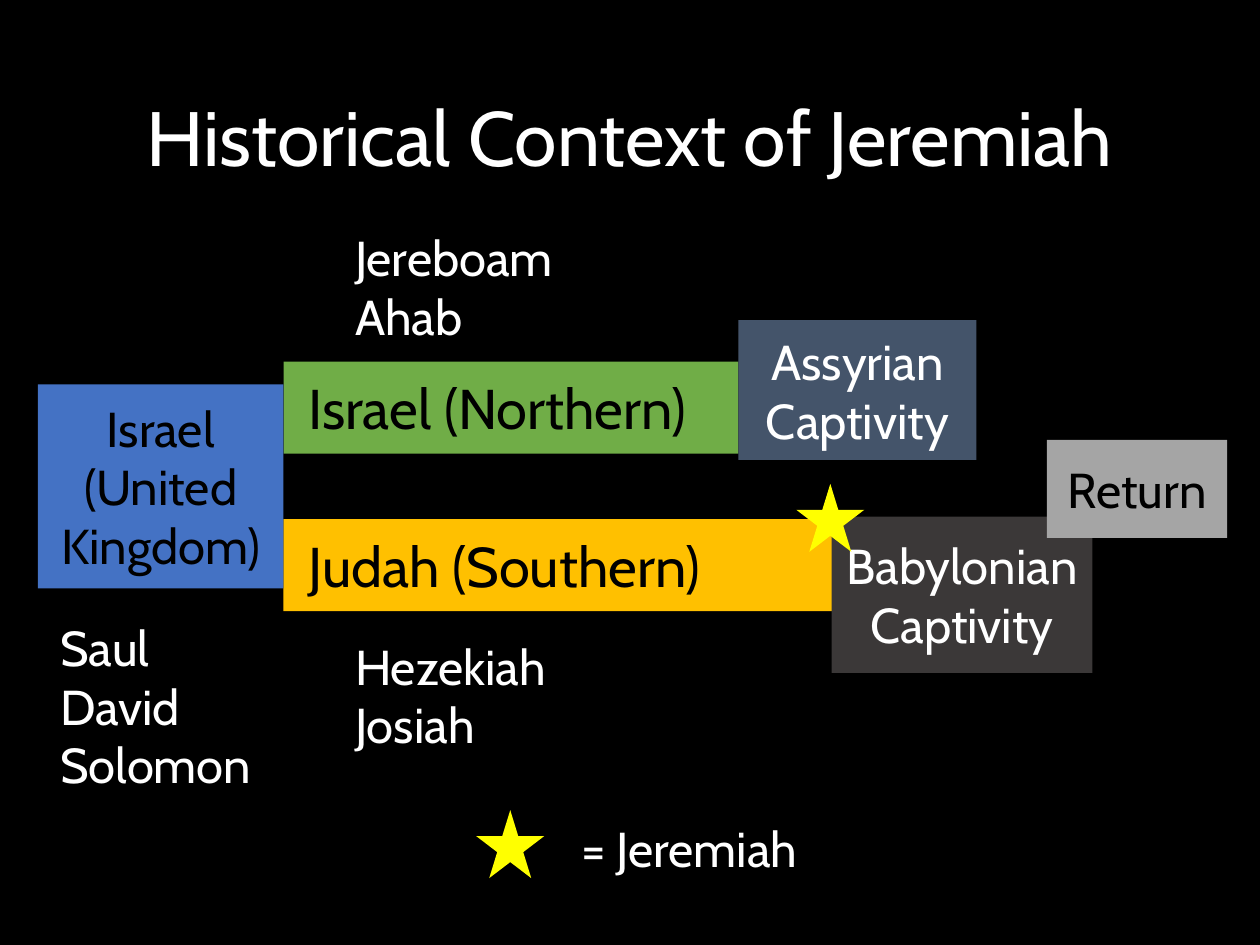
from pptx import Presentation
from pptx.dml.color import RGBColor
from pptx.enum.shapes import MSO_SHAPE as SHAPE
from pptx.enum.text import MSO_ANCHOR as ANCHOR, MSO_AUTO_SIZE as FIT, PP_ALIGN as ALIGN
from pptx.util import Inches, Pt

BLACK = RGBColor(0x00, 0x00, 0x00)
WHITE = RGBColor(0xFF, 0xFF, 0xFF)
GREEN = RGBColor(0x70, 0xAD, 0x47)
GOLD = RGBColor(0xFF, 0xC0, 0x00)
SLATE = RGBColor(0x44, 0x54, 0x6A)
CHARCOAL = RGBColor(0x3B, 0x38, 0x38)
BLUE = RGBColor(0x44, 0x72, 0xC4)
GRAY = RGBColor(0xA5, 0xA5, 0xA5)
YELLOW = RGBColor(0xFF, 0xFF, 0x00)


def write(sp, lines, size, color, align, anchor):
    tf = sp.text_frame
    tf.word_wrap = True
    tf.vertical_anchor = anchor
    tf.text = "\n".join(lines)
    for p in tf.paragraphs:
        p.alignment = align
        p.font.name = "Cabin"
        p.font.size = Pt(size)
        p.font.color.rgb = color


def add_filled(s, kind, box, fill):
    sp = s.shapes.add_shape(kind, *map(Inches, box))
    sp.shadow.inherit = False
    sp.fill.solid()
    sp.fill.fore_color.rgb = fill
    sp.line.fill.background()
    return sp


prs = Presentation()
prs.slide_width, prs.slide_height = Inches(10), Inches(7.5)
s = prs.slides.add_slide(prs.slide_layouts[5])
s.background.fill.solid()
s.background.fill.fore_color.rgb = BLACK

title = s.shapes.title
title.left, title.top = Inches(0.16), Inches(0.4)
title.width, title.height = Inches(9.68), Inches(1.45)
write(title, ["Historical Context of Jeremiah"], 44, WHITE, ALIGN.CENTER, ANCHOR.MIDDLE)
title.text_frame.auto_size = FIT.NONE
title.text_frame.paragraphs[0].line_spacing = 0.9

periods = [
    (" Israel (Northern)", (2.25, 2.87, 3.61, 0.73), GREEN, BLACK, 32, ALIGN.LEFT),
    (" Judah (Southern)", (2.25, 4.12, 5, 0.73), GOLD, BLACK, 32, ALIGN.LEFT),
    ("Assyrian Captivity", (5.86, 2.54, 1.89, 1.11), SLATE, WHITE, 28, ALIGN.CENTER),
    ("Babylonian Captivity", (6.6, 4.1, 2.07, 1.24), CHARCOAL, WHITE, 28, ALIGN.CENTER),
    ("Israel (United Kingdom)", (0.3, 3.05, 1.95, 1.62), BLUE, BLACK, 28, ALIGN.CENTER),
    ("Return", (8.31, 3.49, 1.43, 0.78), GRAY, BLACK, 28, ALIGN.CENTER),
]
for text, box, fill, color, size, align in periods:
    sp = add_filled(s, SHAPE.RECTANGLE, box, fill)
    write(sp, [text], size, color, align, ANCHOR.MIDDLE)

for left, top in [(6.32, 3.84), (3.78, 6.43)]:
    add_filled(s, SHAPE.STAR_5_POINT, (left, top, 0.54, 0.54), YELLOW)

labels = [
    (["= Jeremiah"], (4.35, 6.45, 2.24, 0.57), ALIGN.CENTER),
    (["Saul", "David", "Solomon"], (0.38, 4.85, 1.79, 1.51), ALIGN.LEFT),
    (["Jereboam", "Ahab"], (2.72, 1.76, 1.79, 1.04), ALIGN.LEFT),
    (["Hezekiah", "Josiah"], (2.72, 5, 1.79, 1.04), ALIGN.LEFT),
]
for lines, box, align in labels:
    sp = s.shapes.add_textbox(*map(Inches, box))
    write(sp, lines, 28, WHITE, align, ANCHOR.TOP)
    sp.text_frame.auto_size = FIT.SHAPE_TO_FIT_TEXT

prs.save("out.pptx")
